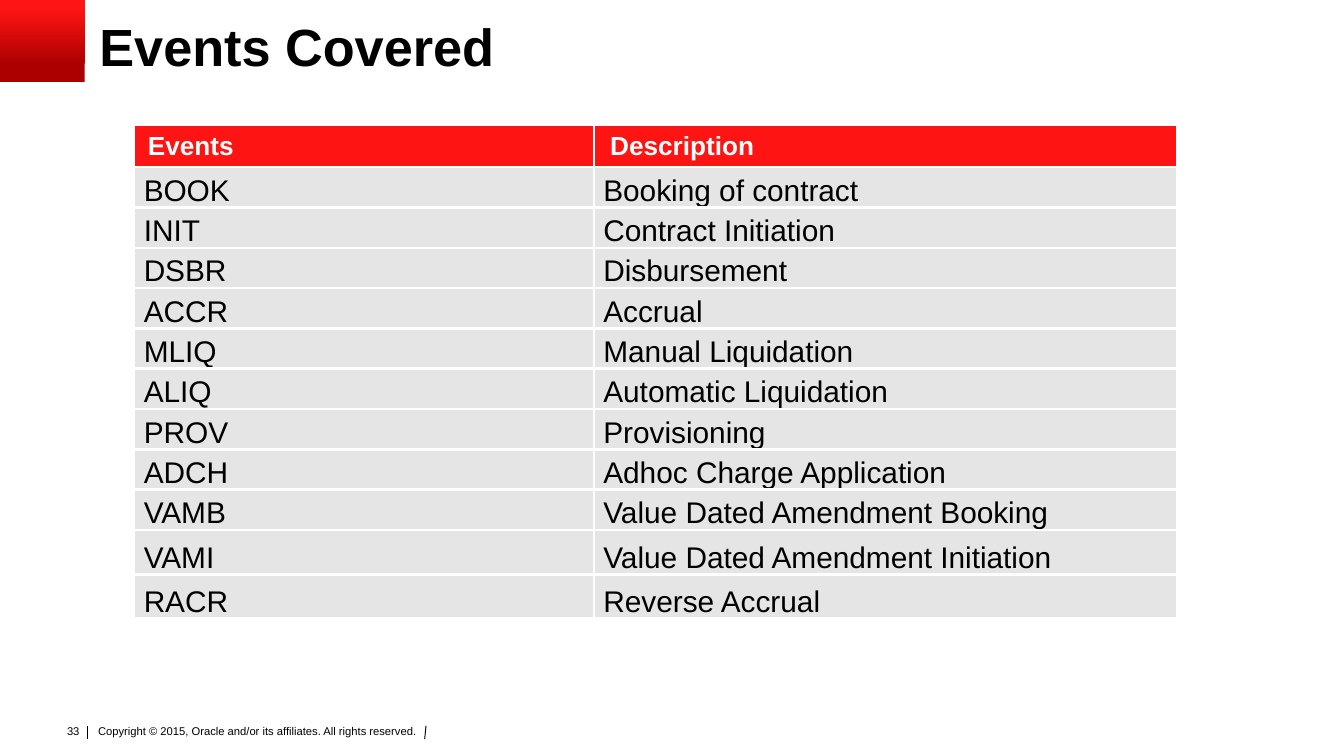
from lxml.etree import SubElement
from pptx import Presentation
from pptx.dml.color import RGBColor
from pptx.enum.shapes import MSO_CONNECTOR, MSO_SHAPE
from pptx.enum.text import MSO_ANCHOR, MSO_AUTO_SIZE, PP_ALIGN
from pptx.oxml.ns import qn
from pptx.util import Inches, Pt

BLACK = RGBColor(0x00, 0x00, 0x00)
WHITE = RGBColor(0xFF, 0xFF, 0xFF)
RED = RGBColor(0xFF, 0x14, 0x14)
DARK_RED = RGBColor(0xAA, 0x00, 0x00)
GREY = RGBColor(0xE5, 0xE5, 0xE5)
FONT = "Arial"

COLUMNS = [3.42, 4.34]
HEADER = ("Events", "Description")
EVENTS = [
    ("BOOK", "Booking of contract"),
    ("INIT", "Contract Initiation"),
    ("DSBR", "Disbursement"),
    ("ACCR", "Accrual"),
    ("MLIQ", "Manual Liquidation"),
    ("ALIQ", "Automatic Liquidation"),
    ("PROV", "Provisioning"),
    ("ADCH", "Adhoc Charge Application"),
    ("VAMB", "Value Dated Amendment Booking"),
    ("VAMI", "Value Dated Amendment Initiation"),
    ("RACR", "Reverse Accrual"),
]
ROWS = [0.25] + [0.3] * 9 + [0.33] * 2


def add_run(p, text, size, color=BLACK, bold=False):
    """Add one formatted run to a paragraph."""
    r = p.add_run()
    r.text = text
    r.font.name = FONT
    r.font.size = Pt(size)
    r.font.bold = bold
    r.font.color.rgb = color


def set_margins(target, left, top):
    """Set equal side margins and equal top and bottom margins."""
    target.margin_left = target.margin_right = Inches(left)
    target.margin_top = target.margin_bottom = Inches(top)


def add_title(s, text):
    """Place and format the title placeholder."""
    sp = s.shapes.title
    sp.left, sp.top, sp.width, sp.height = map(Inches, (0.74, 0.15, 9, 0.44))
    tf = sp.text_frame
    tf.auto_size = MSO_AUTO_SIZE.NONE
    tf.vertical_anchor = MSO_ANCHOR.MIDDLE
    set_margins(tf, 0, 0)
    p = tf.paragraphs[0]
    p.alignment = PP_ALIGN.LEFT
    p.line_spacing = 0.9
    add_run(p, text, 28, bold=True)


def add_corner(s):
    """Draw the red gradient block in the top left corner."""
    sp = s.shapes.add_shape(MSO_SHAPE.RECTANGLE, 0, 0, Inches(0.63), Inches(0.61))
    sp.shadow.inherit = False
    sp.line.fill.background()
    sp.fill.gradient()
    sp.fill.gradient_angle = 90
    stops = [(0.2, DARK_RED), (0.9, RED)]
    for stop, (position, color) in zip(sp.fill.gradient_stops, stops):
        stop.position = position
        stop.color.rgb = color


def add_footer_text(s, text, box, margins, align, wrap):
    """Add a small footer text box."""
    tf = s.shapes.add_textbox(*map(Inches, box)).text_frame
    tf.word_wrap = wrap
    set_margins(tf, *margins)
    p = tf.paragraphs[0]
    p.alignment = align
    add_run(p, text, 6)


def add_divider(s, top_x, bottom_x):
    """Add a short footer line."""
    line = s.shapes.add_connector(
        MSO_CONNECTOR.STRAIGHT,
        Inches(top_x), Inches(5.4), Inches(bottom_x), Inches(5.5))
    line.line.color.rgb = BLACK
    line.line.width = Pt(0.5)
    SubElement(line._element.spPr, qn("a:effectLst"))


def add_borders(cell, row, column):
    """Give a cell white borders where it meets its neighbours and below."""
    sides = ["a:lnL"] if column else ["a:lnR"]
    sides += ["a:lnT", "a:lnB"] if row else ["a:lnB"]
    tcPr = cell._tc.get_or_add_tcPr()
    for side in sides:
        ln = SubElement(tcPr, qn(side), w=str(Pt(1.5)))
        fill = SubElement(ln, qn("a:solidFill"))
        SubElement(fill, qn("a:srgbClr"), val=str(WHITE))


def fill_cell(cell, text, row, column):
    """Format one table cell and write its text."""
    add_borders(cell, row, column)
    cell.fill.solid()
    cell.fill.fore_color.rgb = GREY if row else RED
    cell.vertical_anchor = MSO_ANCHOR.BOTTOM if row else MSO_ANCHOR.MIDDLE
    p = cell.text_frame.paragraphs[0]
    if row:
        set_margins(cell, 0.07, 0)
        add_run(p, text, 16)
    else:
        set_margins(cell, 0.1, 0.04)
        p._p.get_or_add_pPr().set("marL", str(Inches(0.02 * column)))
        add_run(p, text, 14, WHITE, True)


def add_events_table(s):
    """Build the table of events and descriptions."""
    table = s.shapes.add_table(
        len(ROWS), len(COLUMNS), Inches(1), Inches(0.93),
        Inches(sum(COLUMNS)), Inches(3.68)).table
    for column, width in zip(table.columns, COLUMNS):
        column.width = Inches(width)
    for i, (height, texts) in enumerate(zip(ROWS, [HEADER] + EVENTS)):
        table.rows[i].height = Inches(height)
        for j, text in enumerate(texts):
            fill_cell(table.cell(i, j), text, i, j)


def main():
    """Build and save the slide."""
    prs = Presentation()
    prs.slide_width = Inches(10)
    prs.slide_height = prs.slide_width * 9 // 16
    s = prs.slides.add_slide(prs.slide_layouts[5])
    add_footer_text(
        s, "Copyright © 2015, Oracle and/or its affiliates. All rights reserved.",
        (0.69, 5.37, 2.74, 0.24), (0.04, 0.02), PP_ALIGN.LEFT, True)
    add_divider(s, 0.65, 0.65)
    add_divider(s, 3.17, 3.16)
    add_footer_text(
        s, "33", (0.39, 5.34, 0.3, 0.2), (0.1, 0.05), PP_ALIGN.RIGHT, False)
    add_corner(s)
    add_title(s, "Events Covered")
    add_events_table(s)
    prs.save("out.pptx")


if __name__ == "__main__":
    main()
